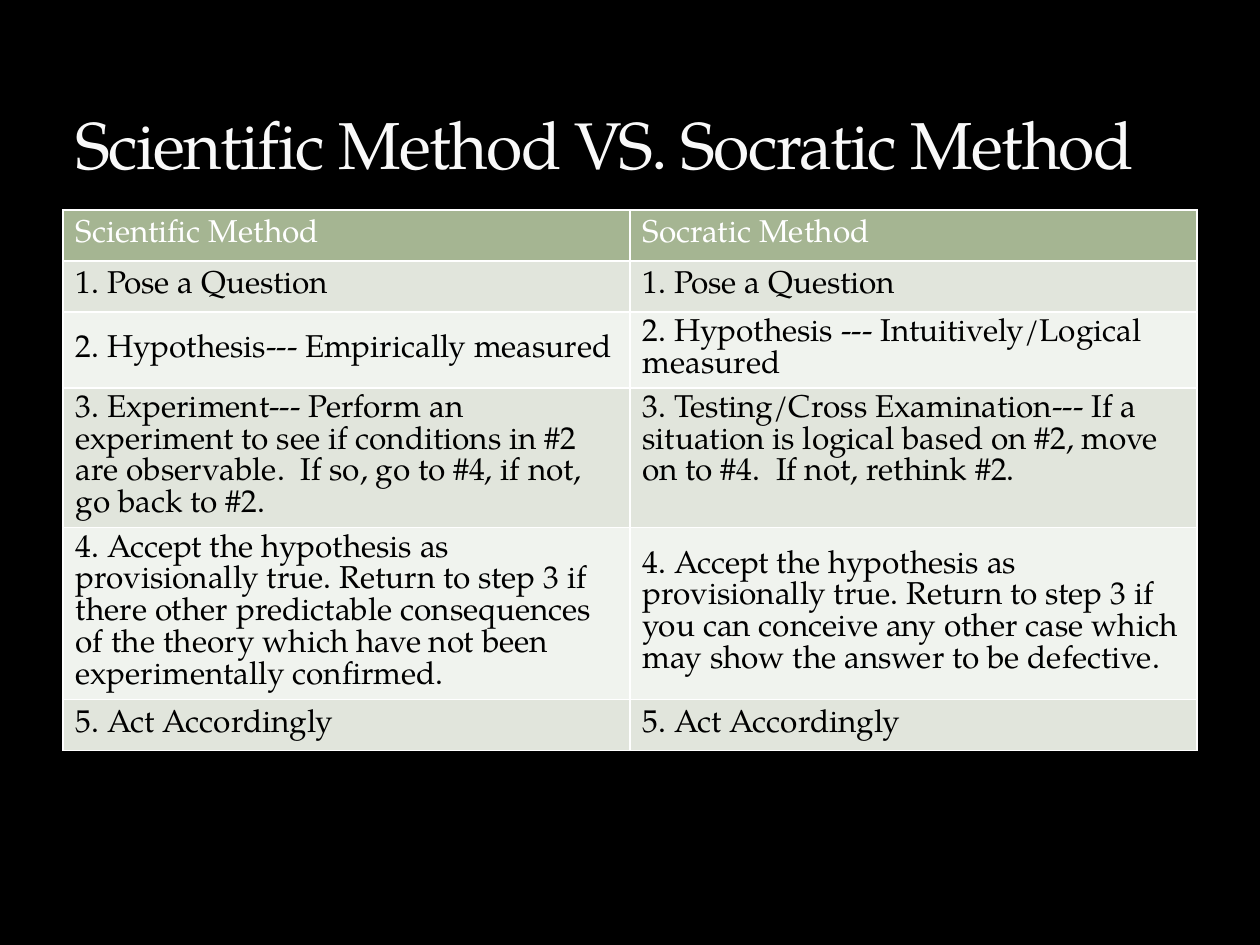
"""Build a slide with a table comparing the scientific and Socratic methods."""
from typing import NamedTuple

from lxml import etree
from pptx import Presentation
from pptx.dml.color import RGBColor
from pptx.enum import text
from pptx.oxml import ns
from pptx.util import Pt

FONT = "TeX Gyre Pagella"
WHITE, BLACK = "FFFFFF", "000000"
HEADER_FILL, BAND_FILLS = "A5B592", ("E1E5DC", "F0F3EE")
MIDDLE, TOP = text.MSO_ANCHOR.MIDDLE, text.MSO_ANCHOR.TOP


class Step(NamedTuple):
    scientific: str
    socratic: str
    height: float = 29.2
    socratic_anchor: text.MSO_ANCHOR = MIDDLE


STEPS = [
    Step("Scientific Method", "Socratic Method"),
    Step("1. Pose a Question", "1. Pose a Question"),
    Step("2. Hypothesis--- Empirically measured",
         "2. Hypothesis --- Intuitively/Logical measured", 43.4),
    Step("3. Experiment--- Perform an experiment to see if conditions in #2 "
         "are observable.  If so, go to #4, if not, go back to #2.",
         "3. Testing/Cross Examination--- If a situation is logical based on #2, "
         "move on to #4.  If not, rethink #2.", 79.4, TOP),
    Step("4. Accept the hypothesis as provisionally true. Return to step 3 if "
         "there other predictable consequences of the theory which have not been "
         "experimentally confirmed.",
         "4. Accept the hypothesis as provisionally true. Return to step 3 if "
         "you can conceive any other case which may show the answer to be "
         "defective.", 98.3),
    Step("5. Act Accordingly", "5. Act Accordingly"),
]


def rgb(color: str) -> RGBColor:
    return RGBColor.from_string(color)


def add_run(p, words: str, size: float, color: str):
    r = p.add_run()
    r.text = words
    r.font.name, r.font.size, r.font.bold = FONT, Pt(size), False
    r.font.color.rgb = rgb(color)
    return r


def add_borders(cell, color: str, width: float) -> None:
    tc_pr = cell._tc.get_or_add_tcPr()
    for i, side in enumerate(("lnL", "lnR", "lnT", "lnB")):
        ln = etree.Element(ns.qn(f"a:{side}"), w=str(Pt(width)))
        fill = etree.SubElement(ln, ns.qn("a:solidFill"))
        etree.SubElement(fill, ns.qn("a:srgbClr"), val=color)
        tc_pr.insert(i, ln)


def fill_cell(cell, words: str, fill: str, color: str, anchor: text.MSO_ANCHOR) -> None:
    cell.fill.solid()
    cell.fill.fore_color.rgb = rgb(fill)
    cell.vertical_anchor = anchor
    add_run(cell.text_frame.paragraphs[0], words, 18, color)
    add_borders(cell, WHITE, 1)


def add_title(s, words: str) -> None:
    sp = s.shapes.title
    sp.left, sp.top, sp.width, sp.height = Pt(36), Pt(12), Pt(648), Pt(96)
    tf = sp.text_frame
    tf.word_wrap, tf.vertical_anchor = True, text.MSO_ANCHOR.BOTTOM
    p = tf.paragraphs[0]
    p.alignment = text.PP_ALIGN.LEFT
    r = add_run(p, words, 37.8, "F9F9F9")
    r.font._element.set("spc", "-100")


def add_steps(s, steps: list[Step]) -> None:
    height = sum(step.height for step in steps)
    frame = s.shapes.add_table(len(steps), 2, Pt(36), Pt(120), Pt(648), Pt(height))
    table = frame.table
    for i, step in enumerate(steps):
        table.rows[i].height = Pt(step.height)
        fill = BAND_FILLS[(i - 1) % 2] if i else HEADER_FILL
        color = BLACK if i else WHITE
        fill_cell(table.cell(i, 0), step.scientific, fill, color, MIDDLE)
        fill_cell(table.cell(i, 1), step.socratic, fill, color, step.socratic_anchor)


def main() -> None:
    prs = Presentation()
    prs.slide_width, prs.slide_height = Pt(720), Pt(540)
    s = prs.slides.add_slide(prs.slide_layouts[5])
    s.background.fill.solid()
    s.background.fill.fore_color.rgb = rgb(BLACK)
    add_title(s, "Scientific Method VS. Socratic Method")
    add_steps(s, STEPS)
    prs.save("out.pptx")


if __name__ == "__main__":
    main()
